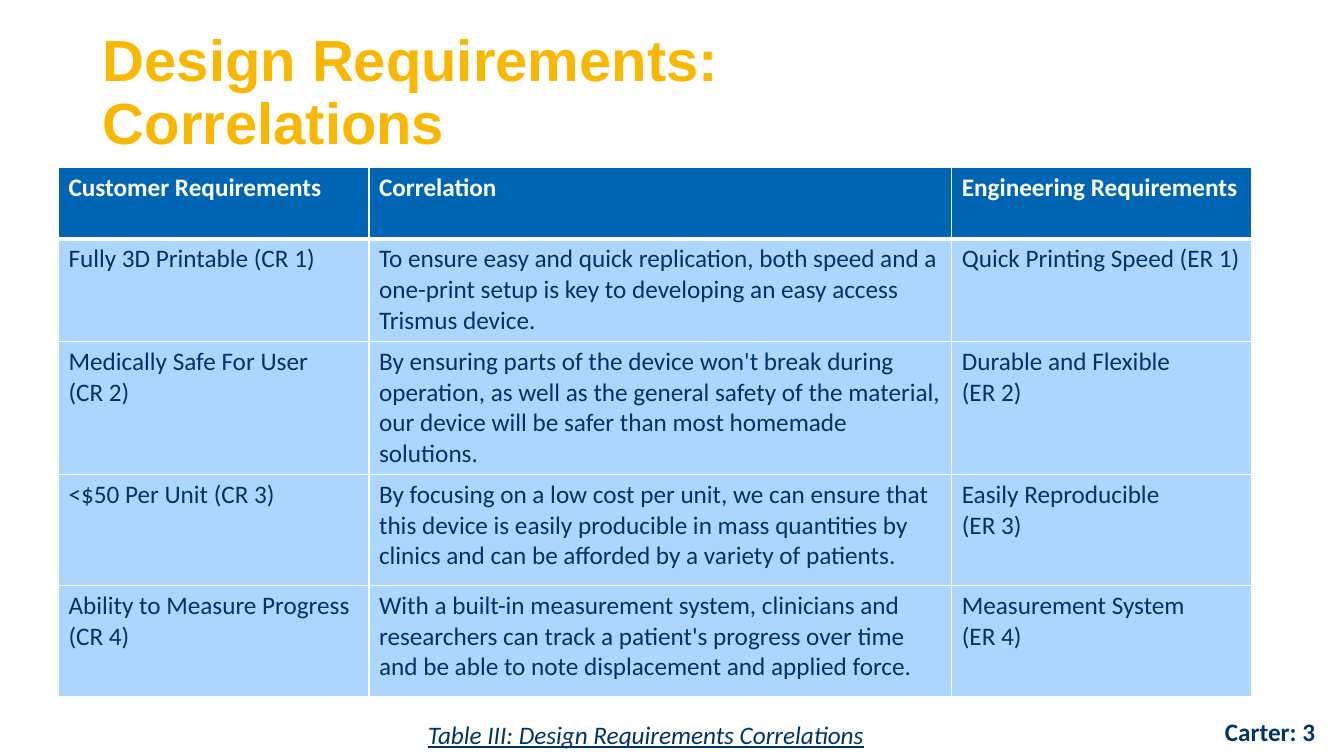
from lxml import etree
from pptx import Presentation
from pptx import util as u
from pptx.dml.color import RGBColor
from pptx.enum import text as t
from pptx.oxml import ns

WIDTH, HEIGHT = 13.33, 7.5
GOLD, BLUE, PALE, NAVY, WHITE = "F8B700", "0066B3", "ADD6FF", "003366", "FFFFFF"

COLUMNS = [3.08, 5.78, 2.97]
ROWS = [0.71, 0.98, 1.1, 1.1, 1.1]
REQUIREMENTS = [
    ["Customer Requirements", "Correlation", "Engineering\u00a0Requirements"],
    ["Fully 3D Printable (CR 1)",
     "To ensure easy and quick replication, both speed and a one-print setup "
     "is key to developing an easy access Trismus device.",
     "Quick Printing Speed (ER 1)"],
    ["Medically Safe For User\n(CR 2)",
     "By ensuring parts of the device won't break during operation, as well as "
     "the general safety of the material, our device will be safer than most "
     "homemade solutions.",
     "Durable and Flexible\n(ER 2)"],
    ["<$50 Per Unit (CR 3)",
     "By focusing on a low cost per unit, we can ensure that this device is "
     "easily producible in mass quantities by clinics and can be afforded by "
     "a variety of patients.",
     "Easily Reproducible\n(ER 3)"],
    ["Ability to Measure Progress\n(CR 4)",
     "With a built-in measurement system, clinicians and researchers can track "
     "a patient's progress over time and be able to note displacement and "
     "applied force.",
     "Measurement System\n(ER 4)"],
]


def color(value):
    return RGBColor.from_string(value)


def box(x, y, w, h):
    """Turn shares of the slide's size into left, top, width, height."""
    return [u.Inches(share * side) for share, side in
            zip((x, y, w, h), (WIDTH, HEIGHT, WIDTH, HEIGHT))]


def write(tf, words, size=18, font="Calibri", fill=NAVY, bold=False,
          italic=False, underline=False, spacing=1.0):
    """Fill a text frame: a newline starts a paragraph, \\v breaks a line."""
    tf.text = words
    for p in tf.paragraphs:
        p.alignment = t.PP_ALIGN.LEFT
        p.line_spacing = spacing
        for r in p.runs:
            r.font.size, r.font.name = u.Pt(size), font
            r.font.color.rgb = color(fill)
            r.font.bold, r.font.italic = bold, italic
            r.font.underline = underline


def add_title(s, words, place):
    sp = s.shapes.title
    sp.left, sp.top, sp.width, sp.height = place
    tf = sp.text_frame
    tf.word_wrap, tf.auto_size = True, t.MSO_AUTO_SIZE.NONE
    tf.vertical_anchor = t.MSO_ANCHOR.MIDDLE
    write(tf, words, size=41.4, font="Arial", fill=GOLD, bold=True, spacing=0.9)


def add_label(s, words, place, **style):
    tf = s.shapes.add_textbox(*place).text_frame
    tf.word_wrap, tf.auto_size = True, t.MSO_AUTO_SIZE.SHAPE_TO_FIT_TEXT
    write(tf, words, **style)


def set_border(cell, side, points):
    # Border lines must come before the cell's fill
    line = etree.Element(ns.qn("a:ln" + side), w=str(u.Pt(points)))
    solid = etree.SubElement(line, ns.qn("a:solidFill"))
    etree.SubElement(solid, ns.qn("a:srgbClr"), val=WHITE)
    cell._tc.get_or_add_tcPr().append(line)


def add_requirements(s, place):
    table = s.shapes.add_table(len(ROWS), len(COLUMNS), *place).table
    for column, width in zip(table.columns, COLUMNS):
        column.width = u.Inches(width)
    for i, (row, height) in enumerate(zip(table.rows, ROWS)):
        row.height = u.Inches(height)
        head = i == 0
        for cell, words in zip(row.cells, REQUIREMENTS[i]):
            for side in "LRTB":
                under_head = (head and side == "B") or (i == 1 and side == "T")
                set_border(cell, side, 3 if under_head else 1)
            cell.fill.solid()
            cell.fill.fore_color.rgb = color(BLUE if head else PALE)
            write(cell.text_frame, words, fill=WHITE if head else NAVY, bold=head)


def main():
    prs = Presentation()
    prs.slide_width, prs.slide_height = u.Inches(WIDTH), u.Inches(HEIGHT)
    s = prs.slides.add_slide(prs.slide_layouts[5])
    s.background.fill.solid()
    s.background.fill.fore_color.rgb = color(WHITE)

    # Heading
    add_title(s, "Design Requirements: \vCorrelations",
              [u.Inches(n) for n in (0.92, 0.4, 11.5, 1.07)])

    # Requirements table
    add_requirements(s, [u.Inches(n) for n in
                         (0.58, 1.66, sum(COLUMNS), sum(ROWS))])

    # Caption and page mark
    add_label(s, "Table III: Design Requirements Correlations",
              box(0.311, 0.945, 0.377, 0.053), italic=True, underline=True)
    add_label(s, "Carter: 3", box(0.904, 0.941, 0.09, 0.053), bold=True)

    prs.save("out.pptx")


if __name__ == "__main__":
    main()
